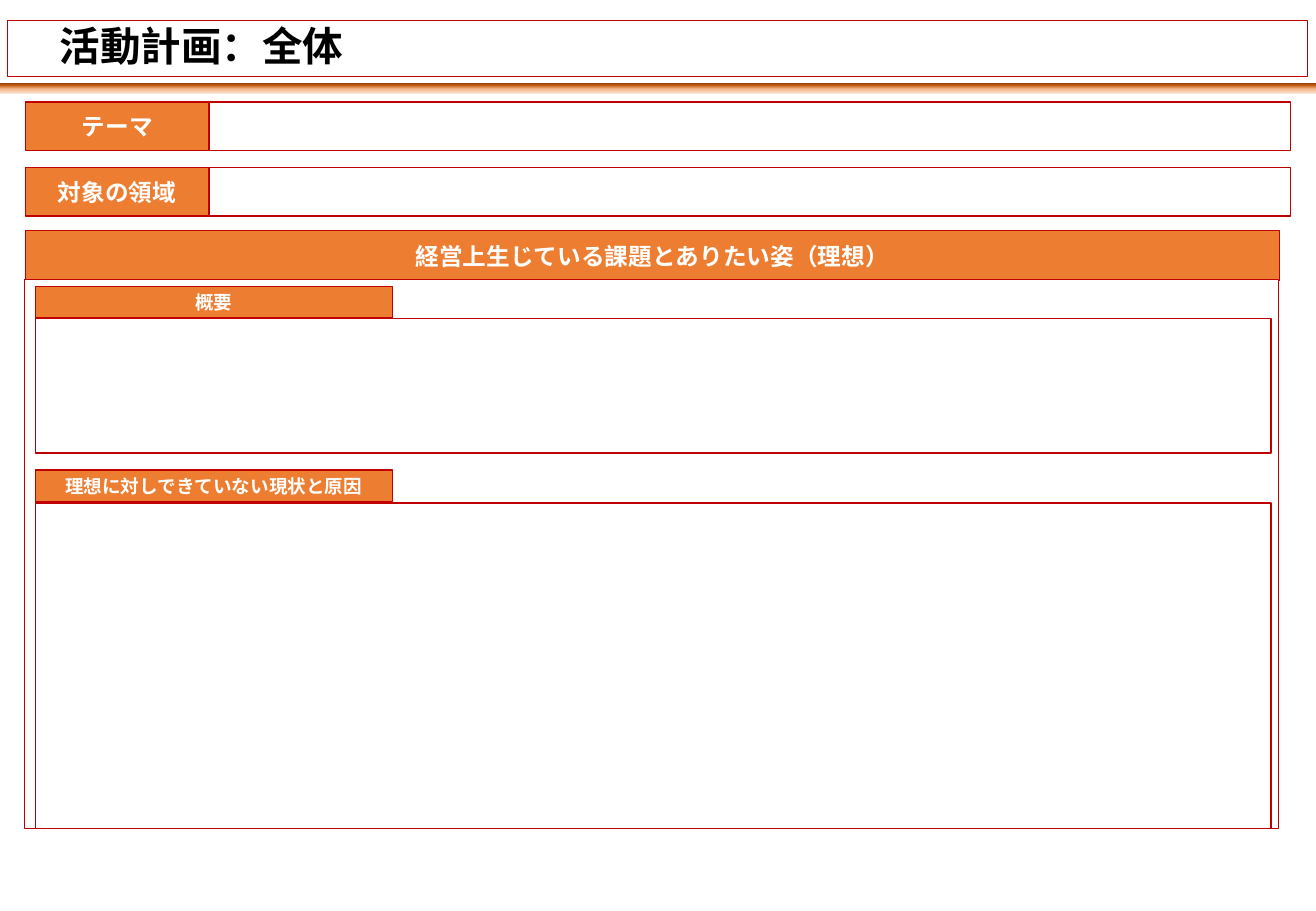
from dataclasses import dataclass

from lxml import etree
from pptx import Presentation
from pptx.dml.color import RGBColor
from pptx.enum.shapes import MSO_SHAPE
from pptx.enum.text import MSO_ANCHOR, MSO_AUTO_SIZE, PP_ALIGN
from pptx.oxml.ns import qn
from pptx.util import Inches, Pt

RECT = MSO_SHAPE.RECTANGLE
LEFT, CENTER = PP_ALIGN.LEFT, PP_ALIGN.CENTER
MIDDLE = MSO_ANCHOR.MIDDLE
NO_AUTOFIT = MSO_AUTO_SIZE.NONE


@dataclass(frozen=True)
class Theme:
    font: str = "Noto Sans CJK JP"
    accent: str = "ED7D31"
    line: str = "C00000"
    white: str = "FFFFFF"
    black: str = "000000"
    title_size: float = 24
    heading_size: float = 14
    label_size: float = 11
    line_width: float = 0.75
    rule: tuple = ((0, "843C0B"), (25, "C55A11"), (56, "F4B183"),
                   (79, "F8CBAD"), (100, "FBE5D6"))


THEME = Theme()

# Content
TITLE = "　活動計画：全体"
FIELDS = ["テーマ", "対象の領域"]
SECTION = "経営上生じている課題とありたい姿（理想）"
# label, label top, box top, box height
PANELS = [
    ("概要", 2.36, 2.62, 1.11),
    ("理想に対しできていない現状と原因", 3.87, 4.14, 2.68),
]

# Layout in inches
SLIDE_W, SLIDE_H = 10.83, 7.5
MARGIN = 0.21
FIELD_TOP, FIELD_STEP, FIELD_H = 0.84, 0.54, 0.4
FIELD_LABEL_W, FIELD_BOX_W = 1.51, 8.9
SECTION_TOP, SECTION_W, SECTION_H = 1.9, 10.32, 0.41
BODY_TOP, BODY_H = 2.3, 4.52
PANEL_LEFT, PANEL_W = 0.29, 10.17
PANEL_LABEL_W, PANEL_LABEL_H = 2.94, 0.26
RULE_TOP, RULE_H, RULE_SPLIT = 0.68, 0.09, 2.77


def write(shape, text, *, size, color=THEME.white, align=CENTER, spacing=1.0):
    tf = shape.text_frame
    tf.word_wrap = True
    tf.auto_size = NO_AUTOFIT
    tf.vertical_anchor = MIDDLE
    tf.margin_left = tf.margin_right = Inches(0.1)
    tf.margin_top = tf.margin_bottom = Inches(0.05)
    p = tf.paragraphs[0]
    p.alignment = align
    p.line_spacing = spacing
    r = p.add_run()
    r.text = text
    r.font.name = THEME.font
    r.font.size = Pt(size)
    r.font.bold = True
    r.font.color.rgb = RGBColor.from_string(color)
    ea = etree.SubElement(r.font._element, qn("a:ea"))
    ea.set("typeface", THEME.font)


def outline(shape):
    shape.line.color.rgb = RGBColor.from_string(THEME.line)
    shape.line.width = Pt(THEME.line_width)


def add_rect(s, x, y, w, h):
    shape = s.shapes.add_shape(RECT, Inches(x), Inches(y), Inches(w), Inches(h))
    shape.shadow.inherit = False
    return shape


def add_box(s, x, y, w, h, fill=THEME.white):
    box = add_rect(s, x, y, w, h)
    box.fill.solid()
    box.fill.fore_color.rgb = RGBColor.from_string(fill)
    outline(box)
    return box


def add_label(s, text, x, y, w, h, size):
    write(add_box(s, x, y, w, h, THEME.accent), text, size=size)


def add_rule(s, x, w):
    """Add a borderless bar that fades from dark at the top to light."""
    bar = add_rect(s, x, RULE_TOP, w, RULE_H)
    bar.line.fill.background()
    bar.fill.gradient()
    grad = bar._element.spPr.find(qn("a:gradFill"))
    stops = grad.find(qn("a:gsLst"))
    for stop in list(stops):
        stops.remove(stop)
    for position, color in THEME.rule:
        stop = etree.SubElement(stops, qn("a:gs"), pos=str(position * 1000))
        etree.SubElement(stop, qn("a:srgbClr"), val=color)
    grad.find(qn("a:lin")).set("ang", str(90 * 60000))


def add_title(s):
    title = s.shapes.title
    title.left, title.top = Inches(0.06), Inches(0.17)
    title.width, title.height = Inches(10.7), Inches(0.46)
    outline(title)
    write(title, TITLE, size=THEME.title_size, color=THEME.black,
          align=LEFT, spacing=0.9)


def main():
    prs = Presentation()
    prs.slide_width, prs.slide_height = Inches(SLIDE_W), Inches(SLIDE_H)
    s = prs.slides.add_slide(prs.slide_layouts[5])

    add_title(s)
    for i, field in enumerate(FIELDS):
        y = FIELD_TOP + i * FIELD_STEP
        add_label(s, field, MARGIN, y, FIELD_LABEL_W, FIELD_H, THEME.heading_size)
        add_box(s, MARGIN + FIELD_LABEL_W, y, FIELD_BOX_W, FIELD_H)

    add_label(s, SECTION, MARGIN, SECTION_TOP, SECTION_W, SECTION_H,
              THEME.heading_size)
    add_box(s, 0.2, BODY_TOP, SECTION_W, BODY_H)
    for label, label_top, box_top, box_h in PANELS:
        add_label(s, label, PANEL_LEFT, label_top, PANEL_LABEL_W, PANEL_LABEL_H,
                  THEME.label_size)
        add_box(s, PANEL_LEFT, box_top, PANEL_W, box_h)

    add_rule(s, RULE_SPLIT, SLIDE_W - RULE_SPLIT)
    add_rule(s, 0, RULE_SPLIT)
    prs.save("out.pptx")


if __name__ == "__main__":
    main()
